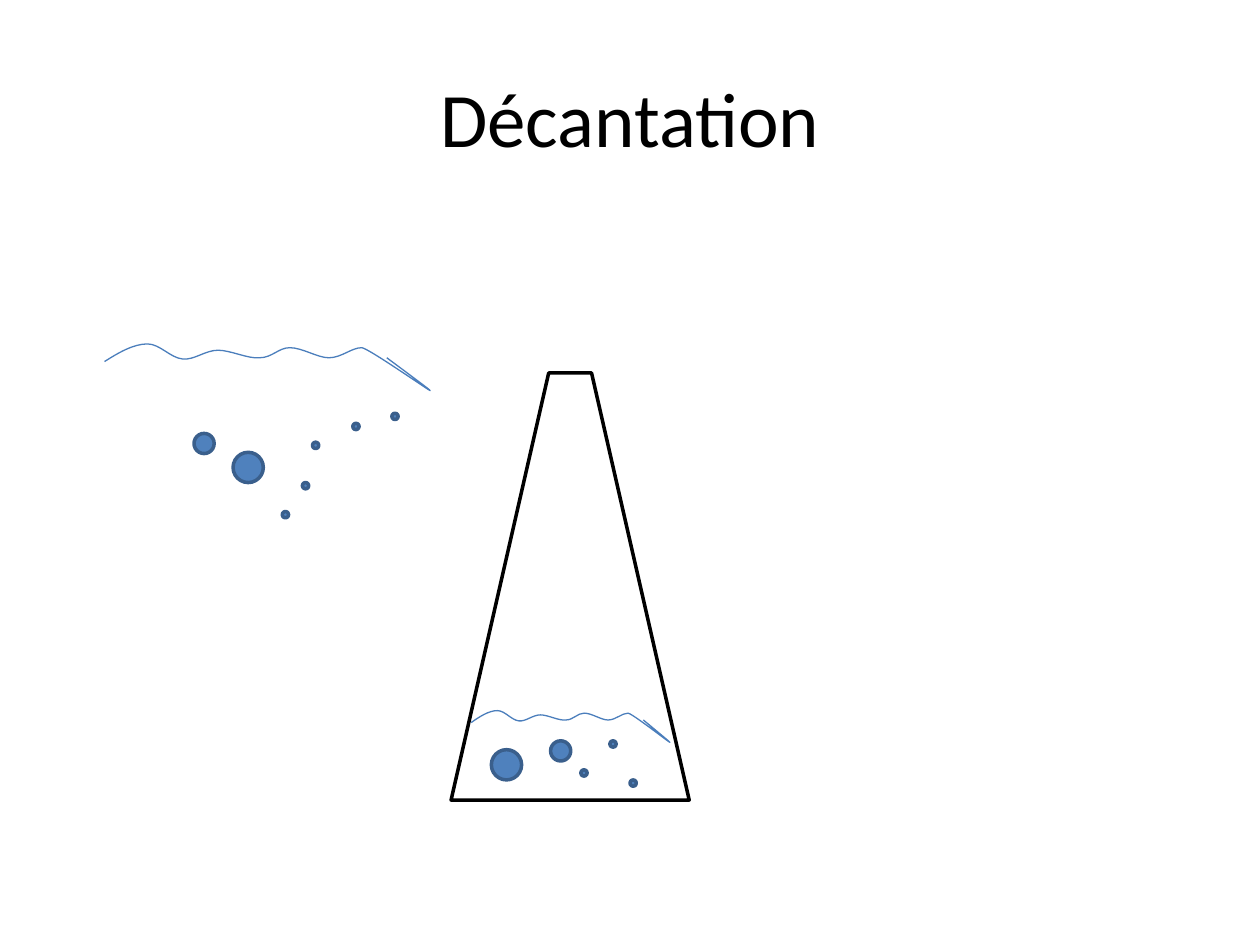
from pptx import Presentation
from pptx.dml.color import RGBColor
from pptx.enum.shapes import MSO_SHAPE as Shape
from pptx.enum.text import MSO_ANCHOR as Anchor, PP_ALIGN as Align
from pptx.oxml import parse_xml
from pptx.oxml.ns import nsdecls, qn
from pptx.util import Inches, Pt

BLUE, EDGE, WATER = "4F81BD", "3A5F8C", "4B7EBC"
BIG, MID, TINY = 0.24, 0.16, 0.05

# Offsets from the wave's left and top: a start, then two controls and an end per curve
START = (0, 0.14)
CURVES = [
    ((0.11, 0.07), (0.23, 0), (0.34, 0)),
    ((0.44, 0), (0.52, 0.11), (0.62, 0.12)),
    ((0.71, 0.13), (0.8, 0.05), (0.9, 0.05)),
    ((1, 0.05), (1.14, 0.12), (1.23, 0.11)),
    ((1.33, 0.11), (1.38, 0.03), (1.47, 0.03)),
    ((1.57, 0.03), (1.69, 0.11), (1.78, 0.11)),
    ((1.88, 0.11), (1.96, 0.03), (2.04, 0.03)),
    ((2.11, 0.03), (3.09, 0.74), (2.24, 0.11)),
]

# Left, top, diameter
FREE = [(1.85, 3.59, BIG), (1.54, 3.44, MID), (2.48, 3.51, TINY),
        (2.8, 3.36, TINY), (2.24, 4.06, TINY), (2.4, 3.83, TINY),
        (3.11, 3.28, TINY)]
SETTLED = [(3.9, 5.95, BIG), (4.37, 5.88, MID), (5, 6.19, TINY),
           (4.84, 5.88, TINY), (4.61, 6.11, TINY)]


def color(code):
    return RGBColor.from_string(code)


def paint(shape, fill, line, width):
    shape.shadow.inherit = False
    if fill:
        shape.fill.solid()
        shape.fill.fore_color.rgb = color(fill)
    else:
        shape.fill.background()
    shape.line.color.rgb = color(line)
    shape.line.width = Pt(width)


def add_title(slide, text):
    box = slide.shapes.add_textbox(Inches(0.5), Inches(0.3), Inches(9), Inches(1.25))
    frame = box.text_frame
    frame.word_wrap = True
    frame.vertical_anchor = Anchor.MIDDLE
    frame.text = text
    para = frame.paragraphs[0]
    para.alignment = Align.CENTER
    para.font.name = "Calibri"
    para.font.size = Pt(44)
    para.font.color.rgb = color("000000")


def add_flask(slide):
    flask = slide.shapes.add_shape(
        Shape.TRAPEZOID, Inches(3.58), Inches(2.96), Inches(1.89), Inches(3.39))
    flask.adjustments[0] = 0.41
    paint(flask, "FFFFFF", "000000", 2)


def add_grain(slide, left, top, size):
    kind = Shape.FLOWCHART_CONNECTOR if size == TINY else Shape.OVAL
    grain = slide.shapes.add_shape(
        kind, Inches(left), Inches(top), Inches(size), Inches(size))
    paint(grain, BLUE, EDGE, 2)


def bend(shape):
    """Turn each three line segments of a freeform into one cubic curve."""
    lines = list(shape.element.iter(qn("a:lnTo")))
    for n in range(0, len(lines), 3):
        curve = parse_xml(f"<a:cubicBezTo {nsdecls('a')}/>")
        lines[n].addprevious(curve)
        for line in lines[n:n + 3]:
            curve.append(line[0])
            line.getparent().remove(line)


def add_wave(slide, left, top, wide=1, high=1):
    def place(point):
        return Inches(left + wide * point[0]), Inches(top + high * point[1])

    build = slide.shapes.build_freeform(*place(START))
    build.add_line_segments(
        [place(point) for curve in CURVES for point in curve], close=False)
    wave = build.convert_to_shape()
    bend(wave)
    paint(wave, None, WATER, 0.75)


def main():
    deck = Presentation()
    deck.slide_width, deck.slide_height = Inches(10), Inches(7.5)
    slide = deck.slides.add_slide(deck.slide_layouts[6])
    add_title(slide, "Décantation")
    add_flask(slide)
    for grain in FREE:
        add_grain(slide, *grain)
    add_wave(slide, 0.83, 2.73)
    add_wave(slide, 3.74, 5.64, 0.61, 0.68)
    for grain in SETTLED:
        add_grain(slide, *grain)
    deck.save("out.pptx")


if __name__ == "__main__":
    main()
